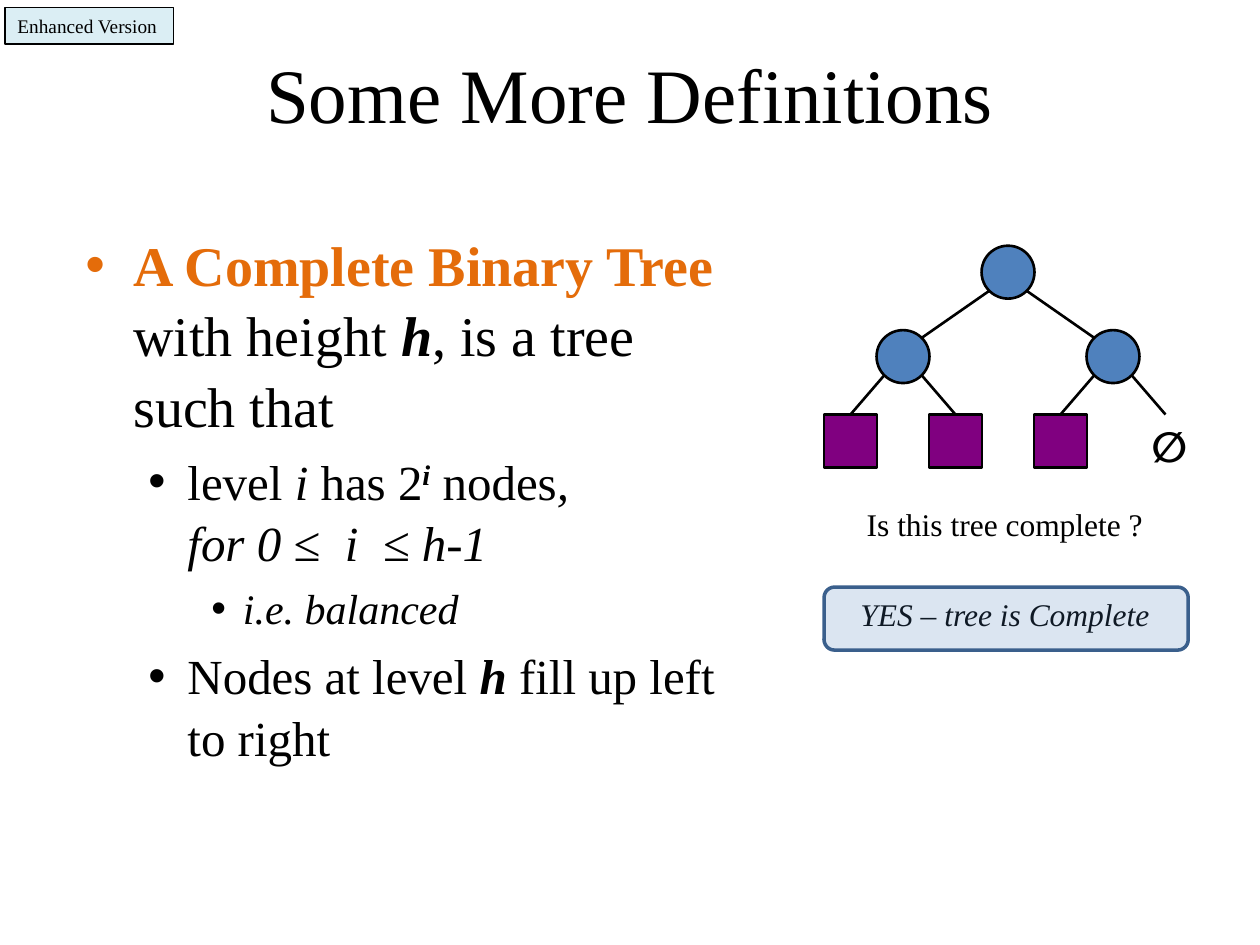
from dataclasses import dataclass
from math import hypot

from lxml.etree import SubElement
from pptx import Presentation
from pptx.dml.color import RGBColor
from pptx.enum.shapes import MSO_CONNECTOR, MSO_SHAPE as Shape
from pptx.enum.text import MSO_ANCHOR, PP_ALIGN
from pptx.oxml.ns import qn
from pptx.util import Inches, Pt


@dataclass(frozen=True)
class Theme:
    font: str = "Times New Roman"
    symbol_font: str = "Calibri"
    black: str = "000000"
    accent: str = "E46C0A"
    node: str = "4F81BD"
    leaf: str = "800080"
    tag: str = "DBEEF4"
    answer_line: str = "3A5F8C"
    title: int = 44
    body: tuple = (32, 28, 24)
    caption: int = 18
    symbol: int = 24
    small: int = 11


THEME = Theme()
BOLD_ITALIC = {"bold": True, "italic": True}
ITALIC = {"italic": True}

TITLE = "Some More Definitions"
TAG = "Enhanced Version"
QUESTION = "Is this tree complete ?"
ANSWER = "YES – tree is Complete"
# (level, runs); a run is (text, format)
BODY = [
    (0, [("A Complete Binary Tree ", {"bold": True, "color": THEME.accent}),
         ("with height ", {}), ("h", BOLD_ITALIC), (", is a tree such that", {})]),
    (1, [("level ", {}), ("i", ITALIC), (" has 2", {}),
         ("i", {**BOLD_ITALIC, "raised": True}), (" nodes", {}),
         (", \nfor 0 ≤  i  ≤ h-1", ITALIC)]),
    (2, [("i.e. balanced", ITALIC)]),
    (1, [("Nodes at level ", {}), ("h", BOLD_ITALIC), (" fill up left to right", {})]),
]
INDENTS = [(0.38, -0.38), (0.81, -0.31), (1.25, -0.25)]

# Tree grid: name -> (column, row); leaves are on row 2
TREE = {"root": (3, 0), "left": (1, 1), "right": (5, 1),
        "leaf 1": (0, 2), "leaf 2": (2, 2), "leaf 3": (4, 2), "empty": (6, 2)}
EDGES = [("root", "left"), ("root", "right"), ("left", "leaf 1"), ("left", "leaf 2"),
         ("right", "leaf 3"), ("right", "empty")]
TREE_LEFT, TREE_TOP, NODE = 6.75, 2.16, 0.42
COLUMN, ROW = 2.5 / 6, 0.67


def rgb(color):
    return RGBColor.from_string(color)


def add_run(paragraph, text, size, font=THEME.font, color=THEME.black, raised=False, **style):
    for index, line in enumerate(text.split("\n")):
        if index:
            paragraph.add_line_break()
        run = paragraph.add_run()
        run.text = line
        values = {"name": font, "size": Pt(size), "bold": False, "italic": False, **style}
        for name, value in values.items():
            setattr(run.font, name, value)
        run.font.color.rgb = rgb(color)
        if raised:
            run.font._element.set("baseline", "30000")


def add_text(slide, box, text, size, wrap=False, **style):
    text_box = slide.shapes.add_textbox(*map(Inches, box))
    text_box.text_frame.word_wrap = wrap
    add_run(text_box.text_frame.paragraphs[0], text, size, **style)


def add_box(slide, kind, box, fill, line=THEME.black, width=1.5, opacity=None):
    shape = slide.shapes.add_shape(kind, *map(Inches, box))
    shape.shadow.inherit = False
    shape.fill.solid()
    shape.fill.fore_color.rgb = rgb(fill)
    shape.line.color.rgb = rgb(line)
    shape.line.width = Pt(width)
    if opacity is not None:
        color = shape._element.spPr.find(qn("a:solidFill"))[0]
        SubElement(color, qn("a:alpha")).set("val", str(opacity * 1000))
    return shape


def add_edge(slide, start, end):
    connector = slide.shapes.add_connector(MSO_CONNECTOR.STRAIGHT, *map(Inches, start + end))
    connector.line.color.rgb = rgb(THEME.black)
    connector.line.width = Pt(1.5)
    SubElement(connector._element.spPr, qn("a:effectLst"))


def add_title(slide):
    title = slide.shapes.title
    for name, value in zip(("left", "top", "width", "height"), (0.5, 0.3, 9, 0.87)):
        setattr(title, name, Inches(value))
    title.text_frame.vertical_anchor = MSO_ANCHOR.MIDDLE
    paragraph = title.text_frame.paragraphs[0]
    paragraph.alignment = PP_ALIGN.CENTER
    add_run(paragraph, TITLE, THEME.title)


def add_body(slide):
    frame = slide.shapes.add_textbox(*map(Inches, (0.58, 1.75, 5.33, 5.25))).text_frame
    frame.word_wrap = True
    for index, (level, runs) in enumerate(BODY):
        paragraph = frame.add_paragraph() if index else frame.paragraphs[0]
        size = THEME.body[level]
        paragraph.level = level
        paragraph.space_before = Pt(size * 0.2)
        paragraph.line_spacing = 1.05
        properties = paragraph._p.get_or_add_pPr()
        for name, value in zip(("marL", "indent"), INDENTS[level]):
            properties.set(name, str(Inches(value)))
        SubElement(properties, qn("a:buFont")).set("typeface", "Arial")
        SubElement(properties, qn("a:buChar")).set("char", "•")
        for text, style in runs:
            add_run(paragraph, text, size, **style)


def add_tree(slide):
    centers = {name: (TREE_LEFT + column * COLUMN, TREE_TOP + row * ROW)
               for name, (column, row) in TREE.items()}
    reach = NODE / 2 / hypot(1, 1)  # offset of a circle's diagonal points
    for parent, child in EDGES:
        (x1, y1), (x2, y2) = centers[parent], centers[child]
        side = 1 if x2 > x1 else -1
        is_leaf = TREE[child][1] == 2
        end = (x2, y2 - NODE / 2) if is_leaf else (x2 - side * reach, y2 - reach)
        add_edge(slide, (x1 + side * reach, y1 + reach), end)
    for name, (x, y) in centers.items():
        if name == "empty":
            add_text(slide, (x - NODE / 2, y - NODE / 2, 0.5, 0.51), "∅", THEME.symbol,
                     wrap=True, font=THEME.symbol_font, bold=True)
            continue
        is_leaf = TREE[name][1] == 2
        add_box(slide, Shape.RECTANGLE if is_leaf else Shape.OVAL,
                (x - NODE / 2, y - NODE / 2, NODE, NODE),
                THEME.leaf if is_leaf else THEME.node)


def main():
    presentation = Presentation()
    presentation.slide_width, presentation.slide_height = Inches(10), Inches(7.5)
    slide = presentation.slides.add_slide(presentation.slide_layouts[5])
    add_title(slide)
    add_body(slide)
    add_text(slide, (6.73, 4.67, 2.52, 0.4), ANSWER, THEME.caption, italic=True)
    add_box(slide, Shape.ROUNDED_RECTANGLE, (6.54, 4.66, 2.89, 0.5), THEME.node,
            THEME.answer_line, 2, opacity=20)
    tag = add_box(slide, Shape.RECTANGLE, (0.04, 0.06, 1.34, 0.29), THEME.tag, width=0.75)
    tag.text_frame.word_wrap = False
    tag.text_frame.paragraphs[0].alignment = PP_ALIGN.LEFT
    add_run(tag.text_frame.paragraphs[0], TAG, THEME.small)
    add_tree(slide)
    add_text(slide, (6.78, 3.96, 2.42, 0.4), QUESTION, THEME.caption)
    presentation.save("out.pptx")


if __name__ == "__main__":
    main()
